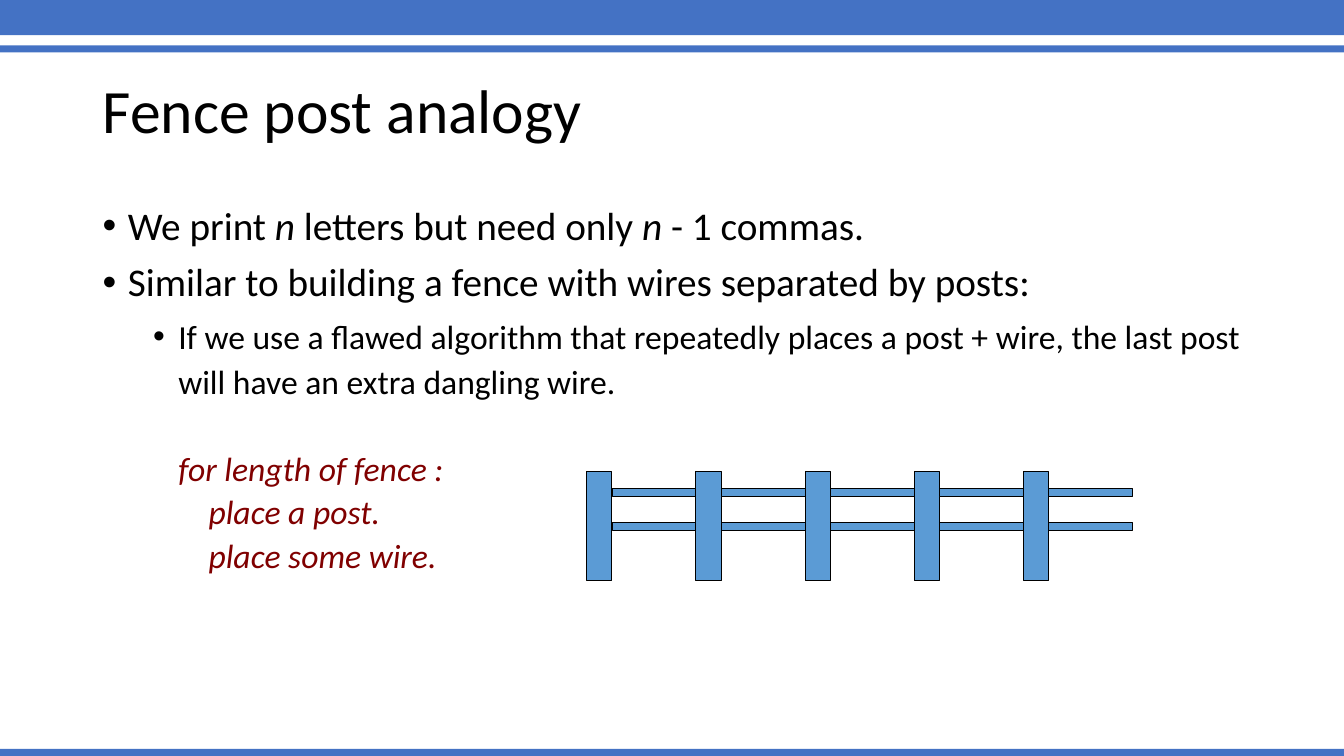
from dataclasses import dataclass

import lxml.etree
import pptx
import pptx.dml.color
import pptx.enum.shapes
import pptx.enum.text
import pptx.oxml.ns
import pptx.util

Inches = pptx.util.Inches
Color = pptx.dml.color.RGBColor


@dataclass(frozen=True)
class Theme:
    font: str = "Calibri"
    text: str = "000000"
    code: str = "800000"
    band: str = "4472C4"
    fence: str = "5B9BD5"
    outline: str = "000000"
    title_size: float = 44
    body_size: float = 28
    detail_size: float = 24
    outline_width: float = 0.75


@dataclass(frozen=True)
class Box:
    left: float
    top: float
    width: float
    height: float

    def lengths(self) -> tuple:
        return tuple(Inches(value) for value in (self.left, self.top, self.width, self.height))


@dataclass(frozen=True)
class Line:
    """A paragraph; text between asterisks is italic."""
    text: str
    size: float
    indent: float
    space_before: float
    color: str = Theme.text
    level: int = 0
    spacing: float = 0.9
    bullet: bool = False


THEME = Theme()
SLIDE_WIDTH, SLIDE_HEIGHT = 13.33, 7.5
TITLE_BOX = Box(0.92, 0.4, 11.5, 1.45)
BODY_BOX = Box(0.92, 2, 11.5, 4.76)
BANDS = (
    Box(0, -0.03, SLIDE_WIDTH, 0.38),
    Box(0, 0.45, SLIDE_WIDTH, 0.07),
    Box(0, 7.43, SLIDE_WIDTH, 0.07),
)
BULLET_HANG = 0.25
BODY_LINES = (
    Line("We print *n* letters but need only *n* - 1 commas.",
         THEME.body_size, 0.25, 10, bullet=True),
    Line("Similar to building a fence with wires separated by posts:",
         THEME.body_size, 0.25, 10, bullet=True),
    Line("If we use a flawed algorithm that repeatedly places a post + wire, "
         "the last post will have an extra dangling wire.",
         THEME.detail_size, 0.75, 5, level=1, spacing=1.1, bullet=True),
    Line("*for length of fence :*", THEME.detail_size, 0.75, 37, THEME.code, 1),
    Line("*place a post.*", THEME.detail_size, 1.05, 5, THEME.code, 1),
    Line("*place some wire.*", THEME.detail_size, 1.05, 5, THEME.code, 1),
)
POST_COUNT = 5
FIRST_POST = Box(5.82, 4.68, 0.25, 1.08)
LAST_POST_LEFT = 10.15
POST_PITCH = (LAST_POST_LEFT - FIRST_POST.left) / (POST_COUNT - 1)
WIRE_TOPS = (4.85, 5.18)
WIRE_HEIGHT = 0.08


def write_text(paragraph, text: str, *, size: float, color: str,
               spacing: float = 0.9, space_before: float = 0) -> None:
    """Fill a paragraph, making the parts between asterisks italic."""
    paragraph.alignment = pptx.enum.text.PP_ALIGN.LEFT
    paragraph.line_spacing = spacing
    paragraph.space_before = pptx.util.Pt(space_before)
    for index, part in enumerate(text.split("*")):
        if part:
            run = paragraph.add_run()
            run.text = part
            run.font.name = THEME.font
            run.font.size = pptx.util.Pt(size)
            run.font.italic = index % 2 == 1
            run.font.color.rgb = Color.from_string(color)


def set_indent(paragraph, indent: float, bullet: bool) -> None:
    properties = paragraph._p.get_or_add_pPr()
    properties.set("marL", str(Inches(indent)))
    properties.set("indent", str(-Inches(BULLET_HANG) if bullet else 0))
    if bullet:
        font = lxml.etree.SubElement(properties, pptx.oxml.ns.qn("a:buFont"))
        font.set("typeface", "Arial")
        character = lxml.etree.SubElement(properties, pptx.oxml.ns.qn("a:buChar"))
        character.set("char", "•")


def add_rectangle(shapes, box: Box, fill: str, outlined: bool = False) -> None:
    shape = shapes.add_shape(pptx.enum.shapes.MSO_SHAPE.RECTANGLE, *box.lengths())
    shape.shadow.inherit = False
    shape.fill.solid()
    shape.fill.fore_color.rgb = Color.from_string(fill)
    if outlined:
        shape.line.color.rgb = Color.from_string(THEME.outline)
        shape.line.width = pptx.util.Pt(THEME.outline_width)
    else:
        shape.line.fill.background()


def add_title(slide) -> None:
    title = slide.shapes.title
    title.left, title.top, title.width, title.height = TITLE_BOX.lengths()
    frame = title.text_frame
    frame.auto_size = pptx.enum.text.MSO_AUTO_SIZE.NONE
    frame.vertical_anchor = pptx.enum.text.MSO_ANCHOR.MIDDLE
    write_text(frame.paragraphs[0], "Fence post analogy",
               size=THEME.title_size, color=THEME.text)


def add_body(slide) -> None:
    frame = slide.shapes.add_textbox(*BODY_BOX.lengths()).text_frame
    frame.word_wrap = True
    for index, line in enumerate(BODY_LINES):
        paragraph = frame.add_paragraph() if index else frame.paragraphs[0]
        paragraph.level = line.level
        write_text(paragraph, line.text, size=line.size, color=line.color,
                   spacing=line.spacing, space_before=line.space_before)
        set_indent(paragraph, line.indent, line.bullet)


def add_fence(slide) -> None:
    """Draw each post with the two wires to its right."""
    fence = slide.shapes.add_group_shape()
    for index in range(POST_COUNT):
        left = FIRST_POST.left + index * POST_PITCH
        post = Box(left, FIRST_POST.top, FIRST_POST.width, FIRST_POST.height)
        wires = [Box(left + post.width, top, POST_PITCH - post.width, WIRE_HEIGHT)
                 for top in WIRE_TOPS]
        for part in (post, *wires):
            add_rectangle(fence.shapes, part, THEME.fence, outlined=True)


def main() -> None:
    presentation = pptx.Presentation()
    presentation.slide_width = Inches(SLIDE_WIDTH)
    presentation.slide_height = Inches(SLIDE_HEIGHT)
    slide = presentation.slides.add_slide(presentation.slide_layouts.get_by_name("Title Only"))
    for band in BANDS:
        add_rectangle(slide.shapes, band, THEME.band)
    add_title(slide)
    add_body(slide)
    add_fence(slide)
    presentation.save("out.pptx")


if __name__ == "__main__":
    main()
